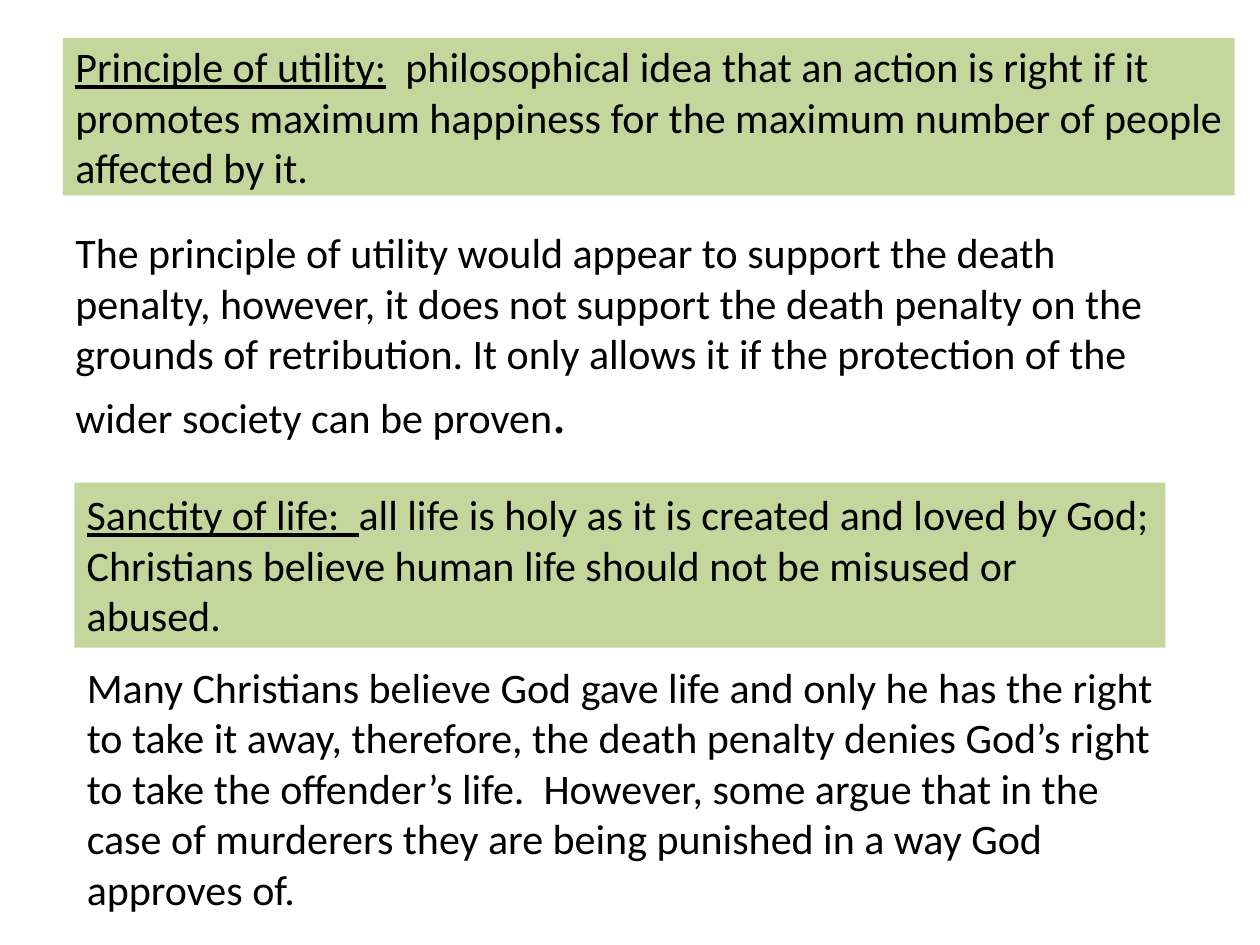
from pptx import Presentation, util as u
from pptx.dml import color
from pptx.enum import text

COLORS = {"ink": "000000", "definition": "C3D69B"}


def add_text(slide, runs, left, top, width, height, fill=None,
             anchor=text.MSO_ANCHOR.TOP):
    """Add a wrapped text box of (wording, size, underlined) runs."""
    shape = slide.shapes.add_textbox(*map(u.Inches, (left, top, width, height)))
    if fill:
        shape.fill.solid()
        shape.fill.fore_color.rgb = color.RGBColor.from_string(COLORS[fill])
    frame = shape.text_frame
    frame.word_wrap = True
    frame.vertical_anchor = anchor
    paragraph = frame.paragraphs[0]
    for wording, size, underlined in runs:
        run = paragraph.add_run()
        run.text = wording
        run.font.name = "Calibri"
        run.font.size = u.Pt(size)
        run.font.underline = underlined
        run.font.color.rgb = color.RGBColor.from_string(COLORS["ink"])


def add_definition(slide, term, meaning, *box, **format_options):
    """Add a green box with an underlined term and its meaning."""
    runs = [(term, 24, True), (meaning, 24, False)]
    add_text(slide, runs, *box, fill="definition", **format_options)


def main():
    """Build the slide on two principles and save it."""
    presentation = Presentation()
    presentation.slide_width = u.Inches(10)
    presentation.slide_height = u.Inches(7.5)
    slide = presentation.slides.add_slide(presentation.slide_layouts[6])

    add_definition(
        slide, "Principle of utility:",
        "  philosophical idea that an action is right if it promotes maximum "
        "happiness for the maximum number of people affected by it.",
        0.5, 0.3, 9.3, 1.25, anchor=text.MSO_ANCHOR.MIDDLE)
    add_text(
        slide,
        [("The principle of utility would appear to support the death penalty, "
          "however, it does not support the death penalty on the grounds of "
          "retribution. It only allows it if the protection of the wider "
          "society can be proven", 24, False), (".", 32, False)],
        0.5, 1.75, 8.83, 1.84)
    add_definition(
        slide, "Sanctity of life:  ",
        "all life is holy as it is created and loved by God; Christians believe "
        "human life should not be misused or abused.",
        0.59, 3.83, 8.66, 1.31)
    add_text(
        slide,
        [("Many Christians believe God gave life and only he has the right to "
          "take it away, therefore, the death penalty denies God’s right to "
          "take the offender’s life.  However, some argue that in the case of "
          "murderers they are being punished in a way God approves of.",
          24, False)],
        0.59, 5.2, 8.82, 2.12)

    presentation.save("out.pptx")


if __name__ == "__main__":
    main()
